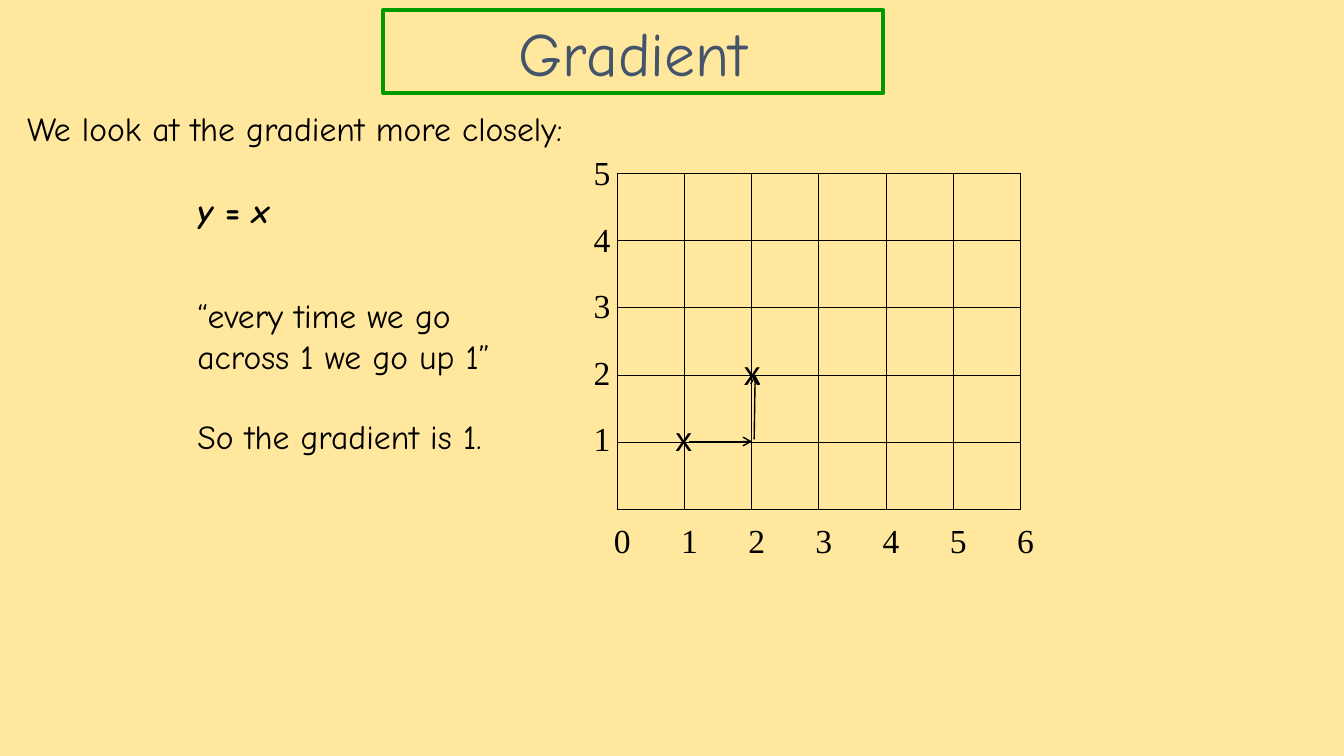
from pptx import Presentation
from pptx.dml.color import RGBColor
from pptx.enum.shapes import MSO_CONNECTOR, MSO_SHAPE
from pptx.enum.text import MSO_ANCHOR, PP_ALIGN
from pptx.oxml.ns import qn
from pptx.util import Inches, Pt
from lxml.etree import SubElement

COLORS = {"background": "FFE79E", "ink": "000000", "title": "44546A", "frame": "009900"}
BODY_FONT, AXIS_FONT, MARK_FONT = "Comic Neue", "Times New Roman", "Arial"
COLUMNS, ROWS = 6, 5
GRID_LEFT, GRID_TOP, CELL = 6.12, 1.72, 4 / 6


def color(name):
    return RGBColor.from_string(COLORS[name])


def style(font, face, size=24, ink="ink"):
    font.name = face
    font.size = Pt(size)
    font.color.rgb = color(ink)


def add_text(slide, left, top, width, height, text, face=BODY_FONT, wrap=False):
    box = slide.shapes.add_textbox(Inches(left), Inches(top), Inches(width), Inches(height))
    frame = box.text_frame
    frame.word_wrap = wrap
    frame.text = text
    for paragraph in frame.paragraphs:
        for run in paragraph.runs:
            style(run.font, face)
    return frame


def add_title(slide, text):
    title = slide.shapes.add_shape(
        MSO_SHAPE.RECTANGLE, Inches(3.8), Inches(0.1), Inches(4.96), Inches(0.82))
    title.shadow.inherit = False
    title.fill.background()
    title.line.color.rgb = color("frame")
    title.line.width = Pt(3)
    frame = title.text_frame
    frame.vertical_anchor = MSO_ANCHOR.MIDDLE
    frame.text = text
    paragraph = frame.paragraphs[0]
    paragraph.alignment = PP_ALIGN.CENTER
    style(paragraph.runs[0].font, BODY_FONT, 44, "title")


def add_equation(slide):
    frame = add_text(slide, 1.86, 1.83, 1.23, 0.51, "")
    for text, italic in (("y", True), (" = ", False), ("x", True)):
        run = frame.paragraphs[0].add_run()
        run.text = text
        style(run.font, BODY_FONT)
        run.font.bold = True
        run.font.italic = italic


def set_borders(cell):
    properties = cell._tc.get_or_add_tcPr()
    for position, side in enumerate(("a:lnL", "a:lnR", "a:lnT", "a:lnB")):
        border = properties.makeelement(qn(side), {"w": str(Pt(0.5))})
        fill = SubElement(border, qn("a:solidFill"))
        SubElement(fill, qn("a:srgbClr"), val=COLORS["ink"])
        properties.insert(position, border)


def add_grid(slide):
    grid = slide.shapes.add_table(
        ROWS, COLUMNS, Inches(GRID_LEFT), Inches(GRID_TOP),
        Inches(COLUMNS * CELL), Inches(ROWS * CELL)).table
    grid.first_row = False
    grid.horz_banding = False
    for cell in grid.iter_cells():
        cell.fill.background()
        set_borders(cell)


def add_axis_numbers(slide):
    for number in range(COLUMNS + 1):
        add_text(slide, 5.99 + number * CELL, 5.11, 0.37, 0.51, str(number), AXIS_FONT)
    for number in range(1, ROWS + 1):
        add_text(slide, 5.79, 4.1 - (number - 1) * 0.66, 0.37, 0.51, str(number), AXIS_FONT)


def add_arrow(slide, x1, y1, x2, y2):
    arrow = slide.shapes.add_connector(
        MSO_CONNECTOR.STRAIGHT, Inches(x1), Inches(y1), Inches(x2), Inches(y2))
    arrow.line.color.rgb = color("ink")
    arrow.line.width = Pt(1)
    SubElement(arrow.line._get_or_add_ln(), qn("a:tailEnd"), type="arrow")
    SubElement(arrow._element.spPr, qn("a:effectLst"))


def main():
    deck = Presentation()
    deck.slide_width, deck.slide_height = Inches(13.33), Inches(7.5)
    slide = deck.slides.add_slide(deck.slide_layouts[6])
    slide.background.fill.solid()
    slide.background.fill.fore_color.rgb = color("background")

    add_text(slide, 0.17, 1.02, 6.1, 0.51, "We look at the gradient more closely:")
    add_equation(slide)
    add_grid(slide)
    add_axis_numbers(slide)
    explanation = add_text(
        slide, 1.86, 2.88, 3.76, 1.72,
        "“every time we go\nacross 1 we go up 1”\nSo the gradient is 1.", wrap=True)
    explanation.paragraphs[2].space_before = Pt(28.8)

    for left, top in ((6.6, 4.1), (7.28, 3.44)):
        add_text(slide, left, top, 0.37, 0.51, "x", MARK_FONT)
    add_arrow(slide, 6.83, 4.38, 7.46, 4.38)
    add_arrow(slide, 7.48, 4.36, 7.49, 3.72)
    add_title(slide, "Gradient")
    deck.save("out.pptx")


if __name__ == "__main__":
    main()
